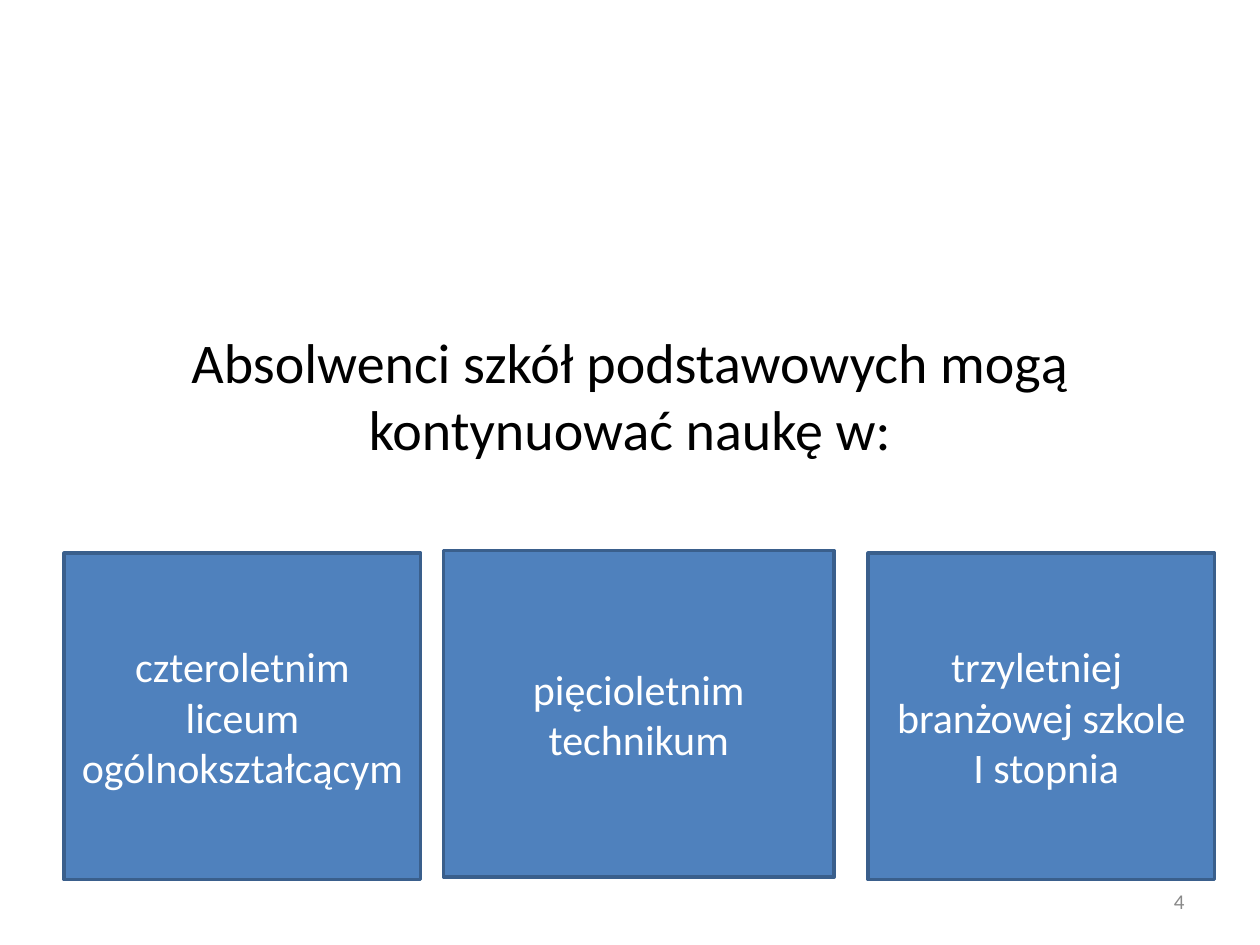
from dataclasses import dataclass

from pptx import Presentation
from pptx.dml.color import RGBColor
from pptx.enum.shapes import MSO_SHAPE
from pptx.enum.text import MSO_ANCHOR, PP_ALIGN
from pptx.util import Inches, Pt

RECTANGLE = MSO_SHAPE.RECTANGLE
TOP, MIDDLE = MSO_ANCHOR.TOP, MSO_ANCHOR.MIDDLE
CENTER, RIGHT = PP_ALIGN.CENTER, PP_ALIGN.RIGHT


@dataclass(frozen=True)
class Theme:
    """Colours and type sizes of the deck."""
    font: str = "Calibri"
    ink: str = "000000"
    fill: str = "4F81BD"
    outline: str = "3A5F8C"
    light: str = "FFFFFF"
    muted: str = "898989"
    heading_size: int = 32
    school_size: int = 24
    number_size: int = 12
    line_width: int = 2


THEME = Theme()
SCHOOL_HEIGHT = 2.59
SCHOOLS = [
    (0.51, 4.39, 2.83, "czteroletnim liceum ogólnokształcącym"),
    (3.52, 4.37, 3.1, "pięcioletnim technikum"),
    (6.89, 4.39, 2.75, "trzyletniej \vbranżowej szkole\v I stopnia"),
]


def write_text(box, text, size, color, align, anchor):
    """Put one styled paragraph into a box."""
    frame = box.text_frame
    frame.word_wrap = True
    frame.vertical_anchor = anchor
    frame.text = text
    para = frame.paragraphs[0]
    para.alignment = align
    for span in para.runs:
        span.font.name = THEME.font
        span.font.size = Pt(size)
        span.font.color.rgb = RGBColor.from_string(color)


def add_label(page, left, top, width, height, text, size, color, align, anchor):
    """Add a plain text box."""
    box = page.shapes.add_textbox(Inches(left), Inches(top), Inches(width), Inches(height))
    write_text(box, text, size, color, align, anchor)


def add_school(page, left, top, width, text):
    """Add a filled rectangle naming one type of school."""
    box = page.shapes.add_shape(
        RECTANGLE, Inches(left), Inches(top), Inches(width), Inches(SCHOOL_HEIGHT))
    box.shadow.inherit = False
    box.fill.solid()
    box.fill.fore_color.rgb = RGBColor.from_string(THEME.fill)
    box.line.color.rgb = RGBColor.from_string(THEME.outline)
    box.line.width = Pt(THEME.line_width)
    write_text(box, text, THEME.school_size, THEME.light, CENTER, MIDDLE)


def main():
    """Build and save the slide."""
    deck = Presentation()
    deck.slide_width, deck.slide_height = Inches(10), Inches(7.5)
    page = deck.slides.add_slide(deck.slide_layouts[6])
    add_label(page, 0.69, 2.55, 8.62, 3.22,
              "Absolwenci szkół podstawowych mogą kontynuować naukę w:",
              THEME.heading_size, THEME.ink, CENTER, TOP)
    for school in SCHOOLS:
        add_school(page, *school)
    add_label(page, 7.17, 6.95, 2.33, 0.4, "4",
              THEME.number_size, THEME.muted, RIGHT, MIDDLE)
    deck.save("out.pptx")


if __name__ == "__main__":
    main()
